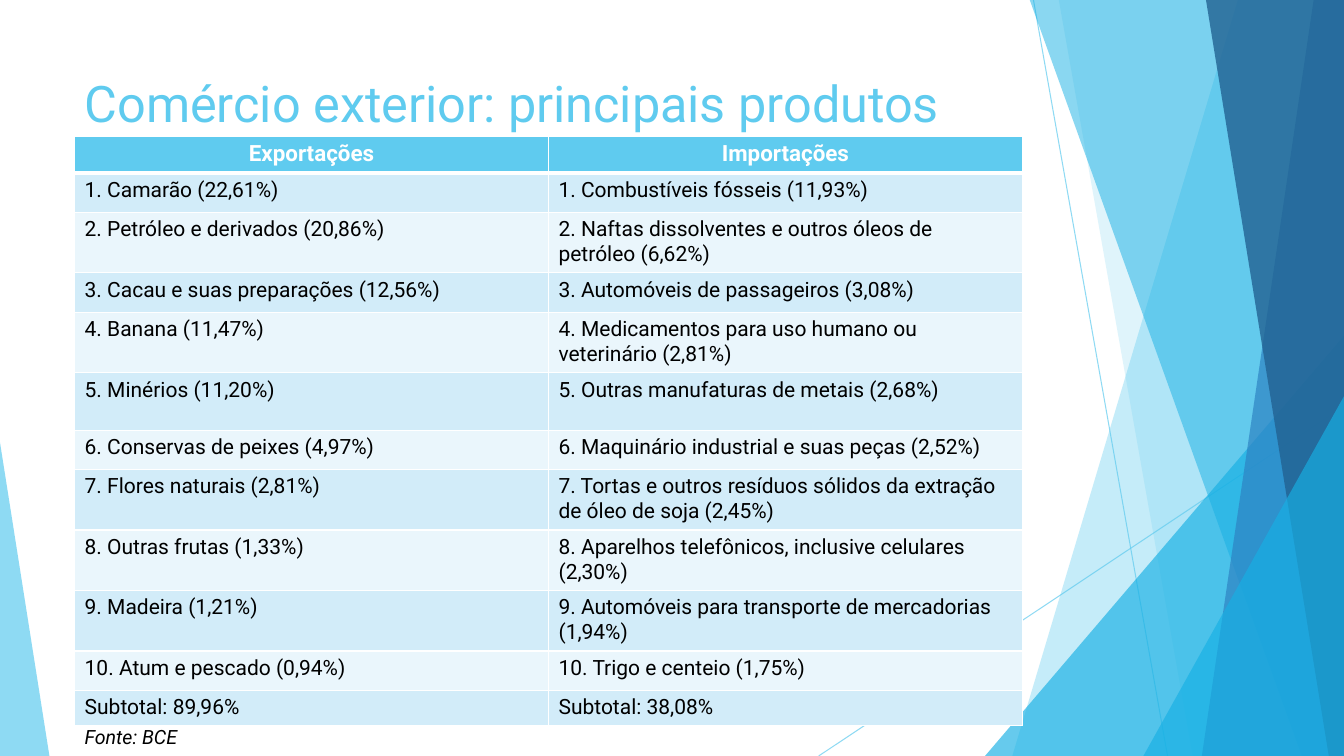
from dataclasses import dataclass

from lxml import etree
from pptx import Presentation
from pptx.dml.color import RGBColor
from pptx.enum.shapes import MSO_CONNECTOR, MSO_SHAPE
from pptx.enum.text import MSO_ANCHOR, PP_ALIGN
from pptx.oxml import parse_xml
from pptx.oxml.ns import nsdecls, qn
from pptx.util import Pt

LEFT, CENTER, JUSTIFY = PP_ALIGN.LEFT, PP_ALIGN.CENTER, PP_ALIGN.JUSTIFY
TOP = MSO_ANCHOR.TOP
TRIANGLE = MSO_SHAPE.ISOSCELES_TRIANGLE
STRAIGHT = MSO_CONNECTOR.STRAIGHT
PX = 9144  # 100 px to the inch
WIDTH, HEIGHT = 1333, 750


@dataclass(frozen=True)
class Theme:
    font: str = "Roboto"
    sky: str = "5FCBEF"
    cyan: str = "17B0E4"
    blue: str = "2E83C3"
    navy: str = "226292"
    white: str = "FFFFFF"
    black: str = "000000"
    bands: tuple = ("D2ECF9", "EAF6FC")
    title_size: int = 36
    header_size: int = 16
    body_size: int = 15
    source_size: int = 14


theme = Theme()


def write(frame, text, size, color, bold=False, italic=False, align=LEFT):
    frame.word_wrap = True
    paragraph = frame.paragraphs[0]
    paragraph.alignment = align
    run = paragraph.add_run()
    run.text = text
    run.font.name = theme.font
    run.font.size = Pt(size)
    run.font.bold = bold
    run.font.italic = italic
    run.font.color.rgb = RGBColor.from_string(color)


def set_opacity(shape, percent):
    color = shape._element.spPr.find(".//" + qn("a:srgbClr"))
    etree.SubElement(color, qn("a:alpha")).set("val", str(percent * 1000))


prs = Presentation()
prs.slide_width, prs.slide_height = WIDTH * PX, HEIGHT * PX
slide = prs.slides.add_slide(prs.slide_layouts[6])
shapes = slide.shapes

# Thin rays behind the panels
for ray in [(1025, 0, 1158, 750), (1333, 403, 812, 750)]:
    line = shapes.add_connector(STRAIGHT, *(n * PX for n in ray))
    line.line.color.rgb = RGBColor.from_string(theme.sky)
    line.line.width = Pt(0.75)
    set_opacity(line, 70)
    etree.SubElement(line._element.spPr, qn("a:effectLst"))

# Panels: (top x, bottom x) reaches the right edge;
# (left, top, width, height, apex) is a triangle
panels = [
    ((1228, 1004), theme.sky, 36),
    ((1050, 1183), theme.sky, 20),
    ((977, 333, 356, 417, 1), theme.cyan, 66),
    ((1021, 1291), theme.cyan, 50),
    ((1303, 1192), theme.blue, 70),
    ((1196, 1318), theme.navy, 80),
    ((1134, 393, 199, 357, 1), theme.cyan, 66),
    ((0, 439, 49, 311, 0), theme.sky, 70),
]
for outline, color, opacity in panels:
    if len(outline) == 2:
        top_x, bottom_x = outline
        builder = shapes.build_freeform(top_x, -1, scale=PX)
        builder.add_line_segments([(WIDTH, -1), (WIDTH, HEIGHT), (bottom_x, HEIGHT)], close=True)
        panel = builder.convert_to_shape()
    else:
        *box, apex = outline
        panel = shapes.add_shape(TRIANGLE, *(n * PX for n in box))
        panel.adjustments[0] = apex
    panel.shadow.inherit = False
    panel.fill.solid()
    panel.fill.fore_color.rgb = RGBColor.from_string(color)
    panel.line.fill.background()
    set_opacity(panel, opacity)

title = shapes.add_textbox(74 * PX, 67 * PX, 940 * PX, 144 * PX)
title.text_frame.vertical_anchor = TOP
write(title.text_frame, "Comércio exterior: principais produtos", theme.title_size, theme.sky)

# Each row: height, exports, imports
trade = [
    (36, "Exportações", "Importações"),
    (39, "1. Camarão (22,61%)", "1. Combustíveis fósseis (11,93%)"),
    (59, "2. Petróleo e derivados (20,86%)", "2. Naftas dissolventes e outros óleos de petróleo (6,62%)"),
    (39, "3. Cacau e suas preparações (12,56%)", "3. Automóveis de passageiros (3,08%)"),
    (59, "4. Banana (11,47%)", "4. Medicamentos para uso humano ou veterinário (2,81%)"),
    (57, "5. Minérios (11,20%)", "5. Outras manufaturas de metais (2,68%)"),
    (39, "6. Conservas de peixes (4,97%)", "6. Maquinário industrial e suas peças (2,52%)"),
    (59, "7. Flores naturais (2,81%)", "7. Tortas e outros resíduos sólidos da extração de óleo de soja (2,45%)"),
    (59, "8. Outras frutas (1,33%)", "8. Aparelhos telefônicos, inclusive celulares (2,30%)"),
    (59, "9. Madeira (1,21%)", "9. Automóveis para transporte de mercadorias (1,94%)"),
    (39, "10. Atum e pescado (0,94%)", "10. Trigo e centeio (1,75%)"),
    (34, "Subtotal: 89,96%", "Subtotal: 38,08%"),
]
table_height = sum(height for height, *_ in trade)
products = shapes.add_table(len(trade), 2, 74 * PX, 135 * PX, 940 * PX, table_height * PX).table
for column in products.columns:
    column.width = 470 * PX

for r, (height, *entries) in enumerate(trade):
    products.rows[r].height = height * PX
    header = r == 0
    border_widths = {"L": 1, "R": 1, "T": 3 if r == 1 else 1, "B": 3 if header else 1}
    for c, entry in enumerate(entries):
        cell = products.cell(r, c)
        cell.vertical_anchor = TOP
        for side, width in border_widths.items():
            cell._tc.get_or_add_tcPr().append(parse_xml(
                f'<a:ln{side} {nsdecls("a")} w="{Pt(width)}"><a:solidFill>'
                f'<a:srgbClr val="{theme.white}"/></a:solidFill></a:ln{side}>'))
        cell.fill.solid()
        cell.fill.fore_color.rgb = RGBColor.from_string(
            theme.sky if header else theme.bands[(r - 1) % 2])
        if header:
            write(cell.text_frame, entry, theme.header_size, theme.white, bold=True, align=CENTER)
        else:
            write(cell.text_frame, entry, theme.body_size, theme.black)

source = shapes.add_textbox(74 * PX, 714 * PX, 482 * PX, 34 * PX)
write(source.text_frame, "Fonte: BCE", theme.source_size, theme.black, italic=True, align=JUSTIFY)

prs.save("out.pptx")
